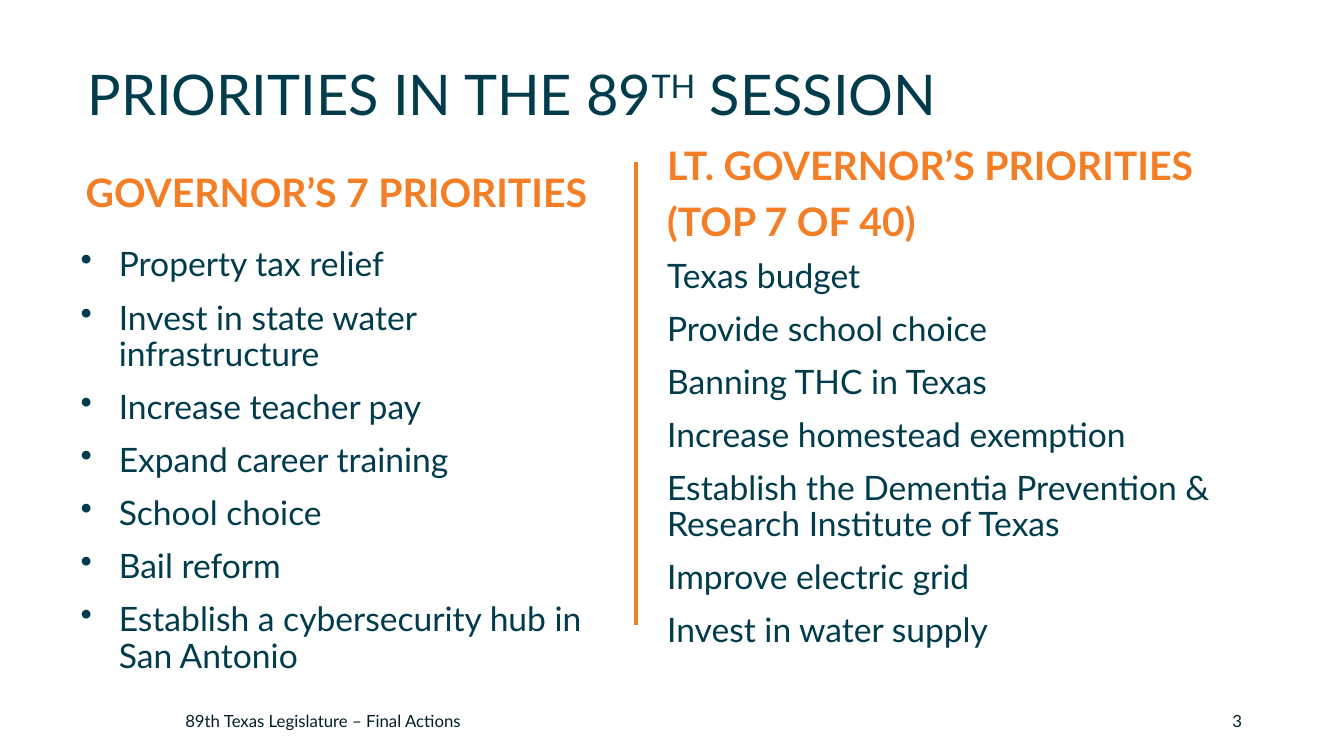
import dataclasses
import typing

import lxml.etree
import pptx
import pptx.dml.color
import pptx.enum.shapes
import pptx.enum.text
import pptx.oxml.ns
import pptx.util

TEAL = pptx.dml.color.RGBColor(0x00, 0x3C, 0x4C)
DARK_TEAL = pptx.dml.color.RGBColor(0x00, 0x1E, 0x26)
ORANGE = pptx.dml.color.RGBColor(0xF4, 0x7E, 0x25)
WHITE = pptx.dml.color.RGBColor(0xFF, 0xFF, 0xFF)

MIDDLE = pptx.enum.text.MSO_ANCHOR.MIDDLE
RIGHT = pptx.enum.text.PP_ALIGN.RIGHT

SLIDE_WIDTH = pptx.util.Inches(13.33)
SLIDE_HEIGHT = pptx.util.Inches(7.5)
COLUMN = SLIDE_WIDTH / 100
ROW = SLIDE_HEIGHT / 100

RIGHT_COLUMN = 48.9
LIST_HEIGHT = 59.87
FOOTER_ROW = 92.67
FOOTER_HEIGHT = 5.33
HANGING_INDENT = pptx.util.Inches(0.38)


@dataclasses.dataclass(frozen=True)
class Area:
    column: float
    row: float
    columns: float
    rows: float


@dataclasses.dataclass(frozen=True)
class PriorityList:
    heading: list[str]
    heading_area: Area
    items: list[str]
    items_area: Area
    items_format: dict[str, typing.Any]


GOVERNOR = PriorityList(
    ["GOVERNOR’S 7 PRIORITIES"],
    Area(5.63, 19.33, 39.45, 12.8),
    [
        "Property tax relief",
        "Invest in state water infrastructure",
        "Increase teacher pay",
        "Expand career training",
        "School choice",
        "Bail reform",
        "Establish a cybersecurity hub in San Antonio",
    ],
    Area(5.25, 32.13, 40.88, LIST_HEIGHT),
    {"bullet": "•"},
)
LIEUTENANT = PriorityList(
    ["LT. GOVERNOR’S PRIORITIES", "(TOP 7 OF 40)"],
    Area(RIGHT_COLUMN, 20.93, 44.63, 10),
    [
        "Texas budget",
        "Provide school choice",
        "Banning THC in Texas",
        "Increase homestead exemption",
        "Establish the Dementia Prevention & Research Institute of Texas",
        "Improve electric grid",
        "Invest in water supply",
    ],
    Area(RIGHT_COLUMN, 33.6, 42, LIST_HEIGHT),
    {"fill": WHITE},
)


def across(columns: float) -> int:
    return round(columns * COLUMN)


def down(rows: float) -> int:
    return round(rows * ROW)


def add_bullet(para, character: str) -> None:
    properties = para._p.get_or_add_pPr()
    properties.set("marL", str(HANGING_INDENT))
    properties.set("indent", str(-HANGING_INDENT))
    bullet = lxml.etree.SubElement(properties, pptx.oxml.ns.qn("a:buChar"))
    bullet.set("char", character)


def add_text(page, area: Area, lines: list[str], *, size: float, color=TEAL,
             bold: bool = False, align=None, anchor=None, fill=None,
             bullet: str = "", spacing: float = 1, before: float = 0,
             after: float = 0):
    box = page.shapes.add_textbox(across(area.column), down(area.row),
                                  across(area.columns), down(area.rows))
    if fill is not None:
        box.fill.solid()
        box.fill.fore_color.rgb = fill
    frame = box.text_frame
    frame.word_wrap = True
    frame.vertical_anchor = anchor
    for index, line in enumerate(lines):
        para = frame.add_paragraph() if index else frame.paragraphs[0]
        if bullet:
            add_bullet(para, bullet)
        para.alignment = align
        para.line_spacing = spacing
        para.space_before = pptx.util.Pt(before if index else 0)
        para.space_after = pptx.util.Pt(after)
        para.font.size = pptx.util.Pt(size)
        add_span(para, line, size=size, color=color, bold=bold)
    return box


def add_span(para, text: str, *, size: float, color=TEAL, bold: bool = False,
             raised: bool = False) -> None:
    span = para.add_run()
    span.text = text
    span.font.name = "Lato"
    span.font.size = pptx.util.Pt(size)
    span.font.bold = bold
    span.font.color.rgb = color
    if raised:
        span._r.get_or_add_rPr().set("baseline", "30000")


def add_items(page, priorities: PriorityList) -> None:
    add_text(page, priorities.items_area, priorities.items, size=24,
             spacing=0.9, before=6, after=6, **priorities.items_format)


def add_heading(page, priorities: PriorityList) -> None:
    add_text(page, priorities.heading_area, priorities.heading, size=28,
             color=ORANGE, bold=True, anchor=MIDDLE, spacing=0.9, before=10)


def add_title(page) -> None:
    box = add_text(page, Area(5.78, 7.87, 86.25, 10), ["PRIORITIES IN THE 89"],
                   size=40, anchor=MIDDLE, spacing=0.9)
    para = box.text_frame.paragraphs[0]
    add_span(para, "TH", size=40, raised=True)
    add_span(para, " SESSION", size=40)


def add_divider(page, column: float, top: float, bottom: float) -> None:
    divider = page.shapes.add_connector(
        pptx.enum.shapes.MSO_CONNECTOR.STRAIGHT,
        across(column), down(top), across(column), down(bottom))
    divider.line.color.rgb = ORANGE
    divider.line.width = pptx.util.Pt(3)
    lxml.etree.SubElement(divider._element.spPr, pptx.oxml.ns.qn("a:effectLst"))


def main() -> None:
    deck = pptx.Presentation()
    deck.slide_width = SLIDE_WIDTH
    deck.slide_height = SLIDE_HEIGHT
    page = deck.slides.add_slide(deck.slide_layouts[6])
    page.background.fill.solid()
    page.background.fill.fore_color.rgb = WHITE

    add_items(page, GOVERNOR)
    add_text(page, Area(13.05, FOOTER_ROW, 26.63, FOOTER_HEIGHT),
             ["89th Texas Legislature – Final Actions"],
             size=12, color=DARK_TEAL, anchor=MIDDLE)
    add_text(page, Area(70.65, FOOTER_ROW, 22.5, FOOTER_HEIGHT), ["3"],
             size=12, color=DARK_TEAL, anchor=MIDDLE, align=RIGHT)
    add_title(page)
    add_heading(page, GOVERNOR)
    add_items(page, LIEUTENANT)
    add_divider(page, 47.32, 21.47, 82.67)
    add_heading(page, LIEUTENANT)
    deck.save("out.pptx")


if __name__ == "__main__":
    main()
